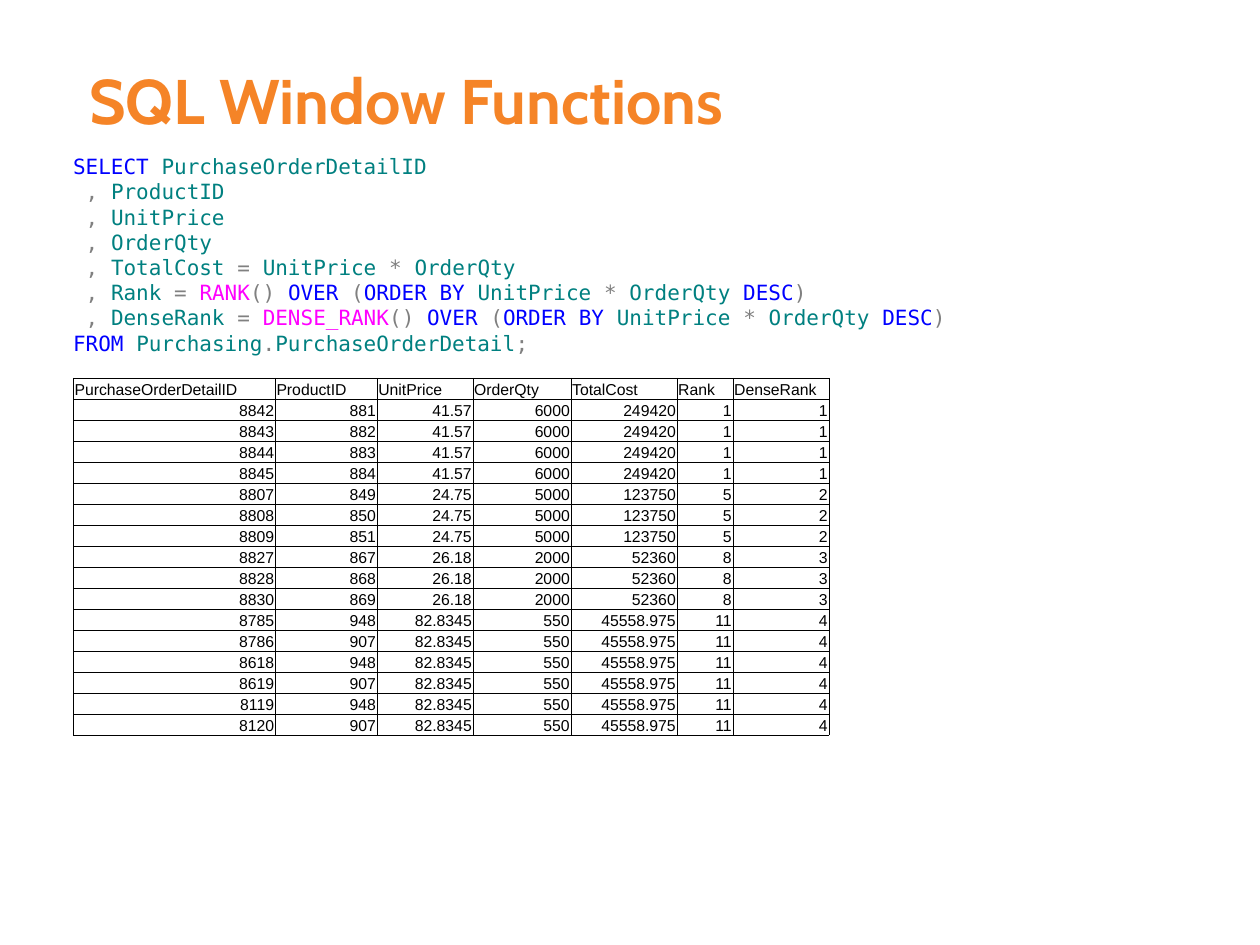
from lxml import etree
from pptx import Presentation
from pptx import util as u
from pptx.dml.color import RGBColor
from pptx.enum import text
from pptx.oxml import ns

KEY, NAME, SIGN, FUNC, GAP = "0000FF", "008080", "808080", "FF00FF", "000000"
HEADS = ["PurchaseOrderDetailID", "ProductID", "UnitPrice", "OrderQty",
         "TotalCost", "Rank", "DenseRank"]
WIDTHS = [115.4, 58.2, 54.8, 56, 60.6, 32, 54.8]
GROUPS = [
    (["41.57", "6000", "249420", "1", "1"],
     [("8842", "881"), ("8843", "882"), ("8844", "883"), ("8845", "884")]),
    (["24.75", "5000", "123750", "5", "2"],
     [("8807", "849"), ("8808", "850"), ("8809", "851")]),
    (["26.18", "2000", "52360", "8", "3"],
     [("8827", "867"), ("8828", "868"), ("8830", "869")]),
    (["82.8345", "550", "45558.975", "11", "4"],
     [("8785", "948"), ("8786", "907"), ("8618", "948"),
      ("8619", "907"), ("8119", "948"), ("8120", "907")]),
]


def paint(color):
    return RGBColor.from_string(color)


def add_run(para, words, font, size, color, bold=False):
    run = para.add_run()
    run.text = words
    run.font.name = font
    run.font.size = u.Pt(size)
    run.font.bold = bold
    run.font.color.rgb = paint(color)


def inset(item, left, top, right, base):
    item.margin_left, item.margin_top = u.Pt(left), u.Pt(top)
    item.margin_right, item.margin_bottom = u.Pt(right), u.Pt(base)


def add_box(slide, left, top, width, height):
    box = slide.shapes.add_textbox(u.Pt(left), u.Pt(top), u.Pt(width), u.Pt(height))
    box.text_frame.word_wrap = True
    return box.text_frame


def add_title(slide, words):
    frame = add_box(slide, 36.6, 30.4, 455, 53)
    inset(frame, 0, 3.6, 0, 3.6)
    frame.vertical_anchor = text.MSO_ANCHOR.MIDDLE
    para = frame.paragraphs[0]
    props = para._p.get_or_add_pPr()
    props.set("marL", str(u.Pt(14.4)))
    props.set("indent", "0")
    add_run(para, words, "Cabin", 36, "F58427", True)


def field(*runs):
    return [(" ", GAP), (", ", SIGN), *runs]


def ranked(name, func):
    return field((name + " ", NAME), ("= ", SIGN), (func, FUNC), ("() ", SIGN),
                 ("OVER ", KEY), ("(", SIGN), ("ORDER BY ", KEY),
                 ("UnitPrice ", NAME), ("* ", SIGN), ("OrderQty ", NAME),
                 ("DESC", KEY), (")", SIGN))


def add_code(slide, lines):
    frame = add_box(slide, 34.7, 84.3, 643, 124)
    frame.auto_size = text.MSO_AUTO_SIZE.SHAPE_TO_FIT_TEXT
    for i, line in enumerate(lines):
        para = frame.add_paragraph() if i else frame.paragraphs[0]
        for words, color in line:
            add_run(para, words, "DejaVu Sans Mono", 12, color)


def add_edges(cell, color, width):
    props = cell._tc.get_or_add_tcPr()
    for side in ("lnL", "lnR", "lnT", "lnB"):
        edge = etree.SubElement(props, ns.qn("a:" + side), w=str(u.Pt(width)))
        fill = etree.SubElement(edge, ns.qn("a:solidFill"))
        etree.SubElement(fill, ns.qn("a:srgbClr"), val=color)


def fill_cell(cell, words, align):
    inset(cell, 0.72, 0.72, 0.72, 0)
    cell.vertical_anchor = text.MSO_ANCHOR.BOTTOM
    add_edges(cell, "000000", 0.25)
    cell.fill.background()
    para = cell.text_frame.paragraphs[0]
    para.alignment = align
    add_run(para, words, "Arial", 9, "000000")


def add_grid(slide, rows):
    high = 12
    grid = slide.shapes.add_table(
        len(rows), len(WIDTHS), u.Pt(41.9), u.Pt(216),
        u.Pt(sum(WIDTHS)), u.Pt(high * len(rows))).table
    grid.first_row = grid.horz_banding = False
    for col, width in zip(grid.columns, WIDTHS):
        col.width = u.Pt(width)
    for r, row in enumerate(rows):
        grid.rows[r].height = u.Pt(high)
        align = text.PP_ALIGN.RIGHT if r else text.PP_ALIGN.LEFT
        for c, words in enumerate(row):
            fill_cell(grid.cell(r, c), words, align)


def main():
    deck = Presentation()
    deck.slide_width, deck.slide_height = u.Pt(720), u.Pt(540)
    slide = deck.slides.add_slide(deck.slide_layouts[6])
    add_title(slide, "SQL Window Functions")
    add_code(slide, [
        [("SELECT ", KEY), ("PurchaseOrderDetailID", NAME)],
        *[field((name, NAME)) for name in HEADS[1:4]],
        field(("TotalCost ", NAME), ("= ", SIGN), ("UnitPrice ", NAME),
              ("* ", SIGN), ("OrderQty", NAME)),
        ranked("Rank", "RANK"),
        ranked("DenseRank", "DENSE_RANK"),
        [("FROM ", KEY), ("Purchasing", NAME), (".", SIGN),
         ("PurchaseOrderDetail", NAME), (";", SIGN)],
    ])
    rows = [[*ids, *tail] for tail, pairs in GROUPS for ids in pairs]
    add_grid(slide, [HEADS, *rows])
    deck.save("out.pptx")


if __name__ == "__main__":
    main()
